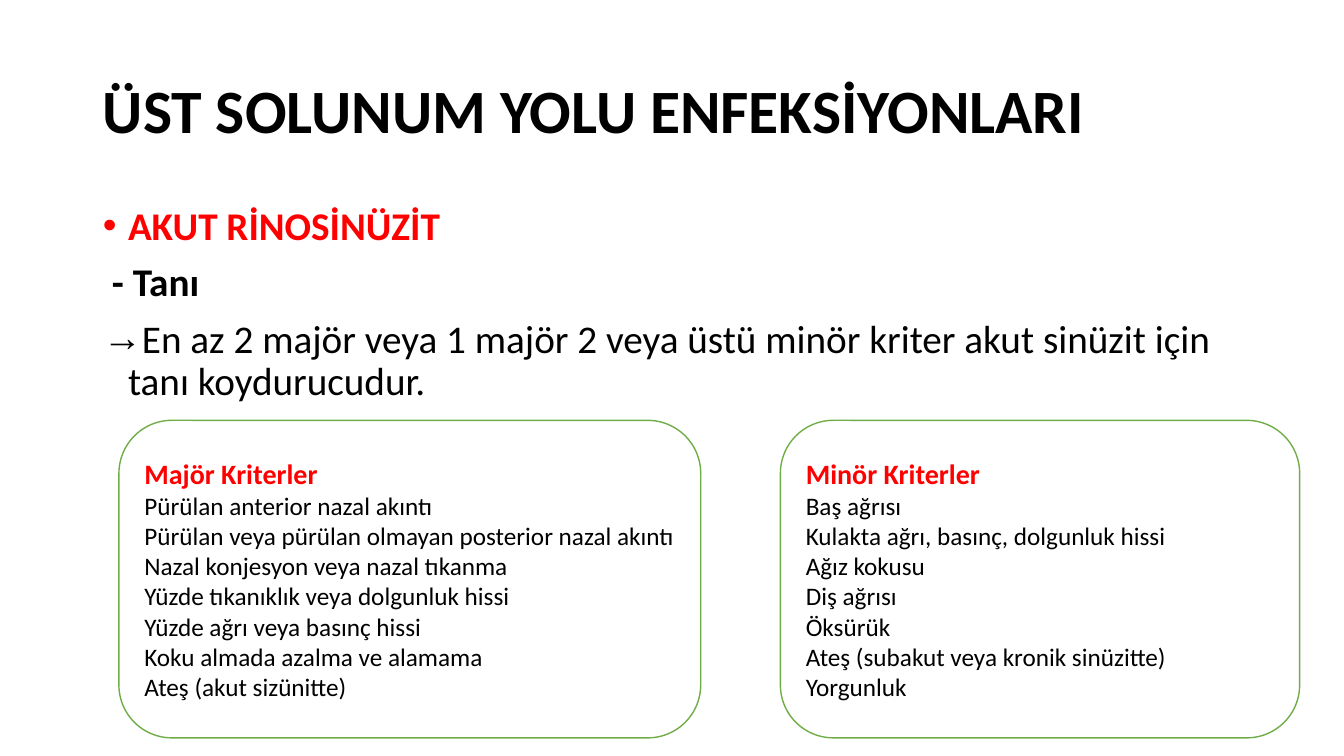
import pptx
import pptx.dml.color
import pptx.enum.shapes
import pptx.enum.text
import pptx.oxml.ns
import pptx.util
from lxml import etree
from pptx.util import Inches

BLACK = pptx.dml.color.RGBColor(0x00, 0x00, 0x00)
RED = pptx.dml.color.RGBColor(0xFF, 0x00, 0x00)
WHITE = pptx.dml.color.RGBColor(0xFF, 0xFF, 0xFF)
GREEN = pptx.dml.color.RGBColor(0x70, 0xAD, 0x47)

FONT = "Calibri"
TITLE = "ÜST SOLUNUM YOLU ENFEKSİYONLARI"
BODY_LINES = [
    ("AKUT RİNOSİNÜZİT", "•", RED, True),
    ("- Tanı", None, BLACK, True),
    ("En az 2 majör veya 1 majör 2 veya üstü minör kriter akut sinüzit için "
     "tanı koydurucudur.", "→", BLACK, False),
]
MAJOR_CRITERIA = [
    "Pürülan anterior nazal akıntı",
    "Pürülan veya pürülan olmayan posterior nazal akıntı",
    "Nazal konjesyon veya nazal tıkanma",
    "Yüzde tıkanıklık veya dolgunluk hissi",
    "Yüzde ağrı veya basınç hissi",
    "Koku almada azalma ve alamama",
    "Ateş (akut sizünitte)",
]
MINOR_CRITERIA = [
    "Baş ağrısı",
    "Kulakta ağrı, basınç, dolgunluk hissi",
    "Ağız kokusu",
    "Diş ağrısı",
    "Öksürük",
    "Ateş (subakut veya kronik sinüzitte)",
    "Yorgunluk",
]


def place(shape, left, top, width, height):
    """Move and size a shape, with lengths in inches."""
    shape.left, shape.top = Inches(left), Inches(top)
    shape.width, shape.height = Inches(width), Inches(height)


def format_runs(para, size, color, bold):
    """Set the font of every run in a paragraph."""
    for span in para.runs:
        span.font.name = FONT
        span.font.size = pptx.util.Pt(size)
        span.font.color.rgb = color
        span.font.bold = bold


def set_bullet(para, mark):
    """Give a paragraph a hanging bullet, or a small plain indent without one."""
    properties = para._p.get_or_add_pPr()
    properties.set("marL", str(Inches(0.25 if mark else 0.09)))
    properties.set("indent", str(Inches(-0.25 if mark else 0)))
    if mark:
        font = etree.SubElement(properties, pptx.oxml.ns.qn("a:buFont"))
        font.set("typeface", "Arial")
        bullet = etree.SubElement(properties, pptx.oxml.ns.qn("a:buChar"))
        bullet.set("char", mark)
    else:
        etree.SubElement(properties, pptx.oxml.ns.qn("a:buNone"))


def fill_title(title):
    """Write the slide title."""
    place(title, 0.92, 0.4, 11.5, 1.45)
    frame = title.text_frame
    frame.text = TITLE
    frame.auto_size = pptx.enum.text.MSO_AUTO_SIZE.NONE
    frame.vertical_anchor = pptx.enum.text.MSO_ANCHOR.MIDDLE
    para = frame.paragraphs[0]
    para.alignment = pptx.enum.text.PP_ALIGN.LEFT
    para.line_spacing = 0.9
    format_runs(para, 44, BLACK, True)


def fill_body(body):
    """Write the diagnosis list."""
    place(body, 0.92, 2, 11.5, 4.76)
    frame = body.text_frame
    frame.text = "\n".join(line[0] for line in BODY_LINES)
    frame.auto_size = pptx.enum.text.MSO_AUTO_SIZE.NONE
    for index, para in enumerate(frame.paragraphs):
        _, mark, color, bold = BODY_LINES[index]
        set_bullet(para, mark)
        para.line_spacing = 0.9
        para.space_before = pptx.util.Pt(10 if index else 0)
        format_runs(para, 28, color, bold)


def add_criteria_box(slide, left, width, heading, criteria):
    """Add a rounded box with a red heading above its criteria."""
    box = slide.shapes.add_shape(
        pptx.enum.shapes.MSO_SHAPE.ROUNDED_RECTANGLE,
        Inches(left), Inches(4.17), Inches(width), Inches(3.15))
    box.shadow.inherit = False
    box.fill.solid()
    box.fill.fore_color.rgb = WHITE
    box.line.color.rgb = GREEN
    box.line.width = pptx.util.Pt(1)
    frame = box.text_frame
    frame.word_wrap = True
    frame.vertical_anchor = pptx.enum.text.MSO_ANCHOR.MIDDLE
    frame.text = "\n".join([heading, *criteria])
    for index, para in enumerate(frame.paragraphs):
        para.alignment = pptx.enum.text.PP_ALIGN.LEFT
        if index == 0:
            format_runs(para, 20, RED, True)
        else:
            format_runs(para, 18, BLACK, False)


def main():
    """Build the slide and save the deck."""
    deck = pptx.Presentation()
    deck.slide_width, deck.slide_height = Inches(13.33), Inches(7.5)
    slide = deck.slides.add_slide(deck.slide_layouts[1])
    fill_title(slide.shapes.title)
    fill_body(slide.placeholders[1])
    add_criteria_box(slide, 1.18, 5.77, "Majör Kriterler", MAJOR_CRITERIA)
    add_criteria_box(slide, 7.74, 5.15, "Minör Kriterler", MINOR_CRITERIA)
    deck.save("out.pptx")


if __name__ == "__main__":
    main()
